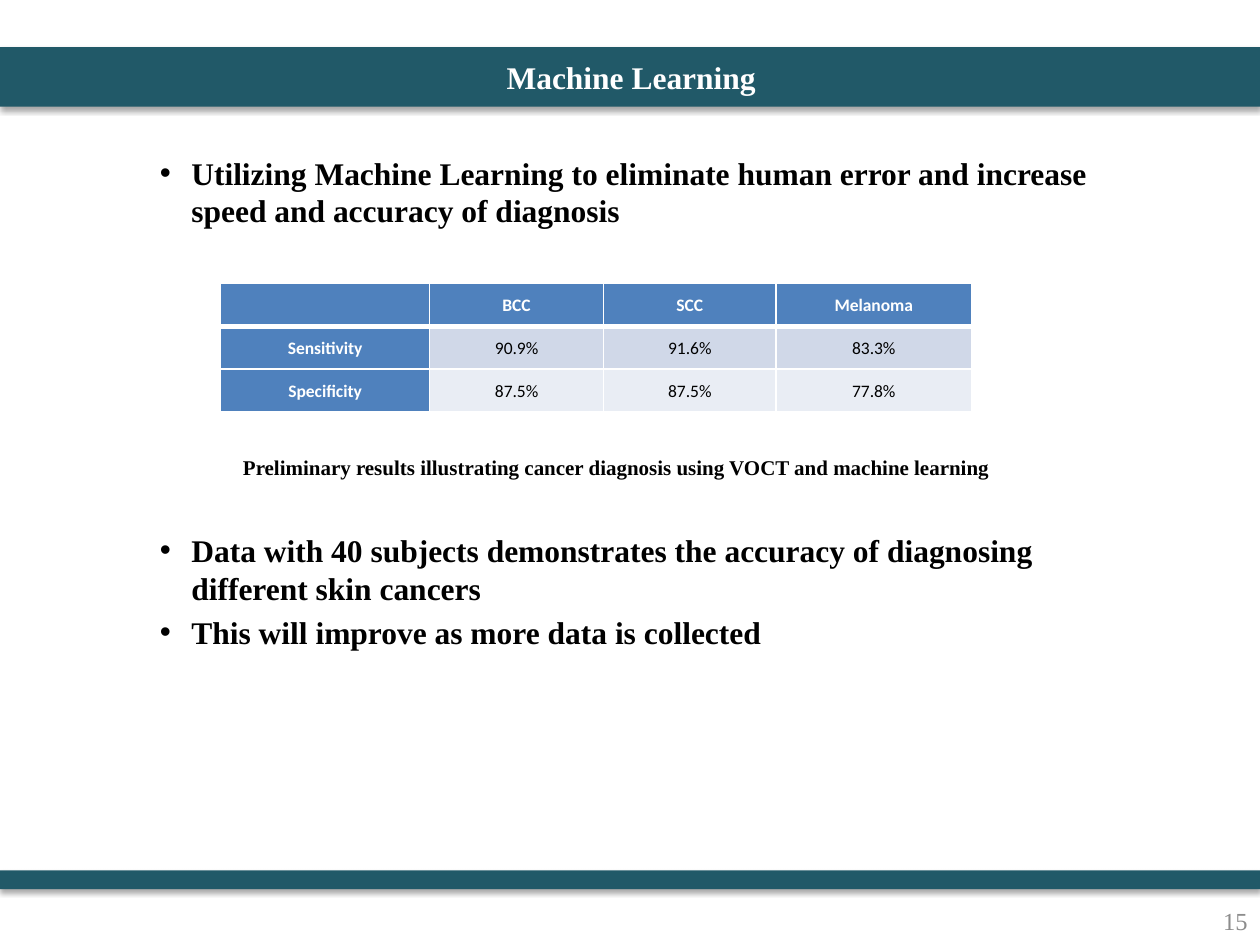
from dataclasses import dataclass

from lxml.etree import SubElement
from pptx import Presentation
from pptx.dml.color import RGBColor
from pptx.enum.shapes import MSO_SHAPE
from pptx.enum.text import MSO_ANCHOR, PP_ALIGN
from pptx.oxml import parse_xml
from pptx.oxml.ns import nsdecls, qn
from pptx.util import Emu, Inches, Pt


@dataclass(frozen=True)
class Theme:
    """Colours, fonts and type sizes of the slide."""
    bar: str = "215968"
    header: str = "4F81BD"
    bands: tuple = ("D0D8E8", "E9EDF4")
    white: str = "FFFFFF"
    black: str = "000000"
    grey: str = "8C8C8C"
    serif: str = "Times New Roman"
    sans: str = "Calibri"
    body_size: int = 18
    caption_size: int = 12
    number_size: int = 14
    table_size: int = 10


THEME = Theme()
WIDTH, HEIGHT = Inches(10), Inches(7.5)
RESULTS = (
    ("", "BCC", "SCC", "Melanoma"),
    ("Sensitivity", "90.9%", "91.6%", "83.3%"),
    ("Specificity", "87.5%", "87.5%", "77.8%"),
)
COLUMN_WIDTHS = (1.66, 1.38, 1.37, 1.55)


def share_box(left, top, width, height):
    """Turn shares of the slide's size into a box of lengths."""
    return (Emu(int(WIDTH * left)), Emu(int(HEIGHT * top)),
            Emu(int(WIDTH * width)), Emu(int(HEIGHT * height)))


def add_run(paragraph, text, size, color, bold=False, font=THEME.serif):
    """Append one styled run to a paragraph."""
    run = paragraph.add_run()
    run.text = text
    run.font.size = Pt(size)
    run.font.name = font
    run.font.bold = bold
    run.font.color.rgb = RGBColor.from_string(color)


def add_bar(slide, box):
    """Draw a full-width bar with a soft shadow below it."""
    bar = slide.shapes.add_shape(MSO_SHAPE.RECTANGLE, *box)
    bar.fill.solid()
    bar.fill.fore_color.rgb = RGBColor.from_string(THEME.bar)
    bar.line.fill.background()
    bar.shadow.inherit = False
    effects = bar._element.spPr.find(qn("a:effectLst"))
    effects.append(parse_xml(
        f'<a:outerShdw {nsdecls("a")} blurRad="{Pt(3.1)}" dist="{Pt(1.8)}" '
        f'dir="5400000" rotWithShape="0"><a:srgbClr val="{THEME.black}">'
        '<a:alpha val="35000"/></a:srgbClr></a:outerShdw>'))


def add_text_frame(slide, box, anchor=MSO_ANCHOR.TOP):
    """Add a wrapping text box and return its frame."""
    frame = slide.shapes.add_textbox(*box).text_frame
    frame.word_wrap = True
    frame.vertical_anchor = anchor
    return frame


def add_label(slide, box, text, size, color, alignment, bold=False):
    """Add one vertically centred line of text."""
    paragraph = add_text_frame(slide, box, MSO_ANCHOR.MIDDLE).paragraphs[0]
    paragraph.alignment = alignment
    add_run(paragraph, text, size, color, bold)


def indent(paragraph, margin, first_line=0, bullet=None):
    """Set the paragraph's indents and optional bullet."""
    properties = paragraph._p.get_or_add_pPr()
    properties.set("marL", str(Inches(margin)))
    properties.set("indent", str(Inches(first_line)))
    if bullet:
        SubElement(properties, qn("a:buFont"), typeface="Arial")
        SubElement(properties, qn("a:buChar"), char=bullet)


def add_body(slide, box):
    """Write the bullets and the caption of the table."""
    items = (
        ("Utilizing Machine Learning to eliminate human error and increase "
         "speed and accuracy of diagnosis", 0, True),
        ("Preliminary results illustrating cancer diagnosis using VOCT "
         "and machine learning", 129, False),
        ("Data with 40 subjects demonstrates the accuracy of diagnosing "
         "different skin cancers", 29, True),
        ("This will improve as more data is collected", 3.6, True),
    )
    frame = add_text_frame(slide, box)
    for index, (text, gap, bulleted) in enumerate(items):
        paragraph = frame.add_paragraph() if index else frame.paragraphs[0]
        paragraph.space_before = Pt(gap)
        if bulleted:
            indent(paragraph, 0.25, -0.25, "•")
        else:
            indent(paragraph, 0.66)
        size = THEME.body_size if bulleted else THEME.caption_size
        add_run(paragraph, text, size, THEME.black, True)


def set_borders(cell, bottom, top):
    """Give a cell white borders of the given bottom and top widths."""
    properties = cell._tc.get_or_add_tcPr()
    widths = {"lnL": 1, "lnR": 1, "lnT": top, "lnB": bottom}
    for index, (side, width) in enumerate(widths.items()):
        properties.insert(index, parse_xml(
            f'<a:{side} {nsdecls("a")} w="{Pt(width)}"><a:solidFill>'
            f'<a:srgbClr val="{THEME.white}"/></a:solidFill></a:{side}>'))


def add_results(slide, box):
    """Build the table of sensitivity and specificity."""
    table = slide.shapes.add_table(len(RESULTS), len(COLUMN_WIDTHS), *box).table
    table.first_col = True
    for column, width in zip(table.columns, COLUMN_WIDTHS):
        column.width = Emu(int(box[2] * width / sum(COLUMN_WIDTHS)))
    for row_index, values in enumerate(RESULTS):
        for column_index, value in enumerate(values):
            cell = table.cell(row_index, column_index)
            heading = row_index == 0 or column_index == 0
            fill = THEME.header if heading else THEME.bands[row_index - 1]
            cell.fill.solid()
            cell.fill.fore_color.rgb = RGBColor.from_string(fill)
            set_borders(cell, bottom=1 if row_index else 3,
                        top=3 if row_index == 1 else 1)
            cell.margin_left = cell.margin_right = 0
            cell.margin_top = cell.margin_bottom = 0
            cell.vertical_anchor = MSO_ANCHOR.MIDDLE
            paragraph = cell.text_frame.paragraphs[0]
            paragraph.alignment = PP_ALIGN.CENTER
            paragraph.line_spacing = Pt(13)
            if value:
                color = THEME.white if heading else THEME.black
                add_run(paragraph, value, THEME.table_size, color, heading,
                        THEME.sans)


def main():
    """Build the slide and save it."""
    presentation = Presentation()
    presentation.slide_width, presentation.slide_height = WIDTH, HEIGHT
    slide = presentation.slides.add_slide(presentation.slide_layouts[6])
    add_bar(slide, share_box(0, 0.05, 1, 0.063))
    add_bar(slide, share_box(0, 0.921, 1, 0.02))
    add_label(slide, share_box(0.775, 0.948, 0.225, 0.053), "15",
              THEME.number_size, THEME.grey, PP_ALIGN.RIGHT)
    add_body(slide, share_box(0.117, 0.156, 0.808, 0.744))
    add_label(slide, share_box(0.027, 0.05, 0.948, 0.063), "Machine Learning",
              THEME.body_size, THEME.white, PP_ALIGN.CENTER, True)
    add_results(slide, share_box(0.175, 0.3, 0.596, 0.136))
    presentation.save("out.pptx")


if __name__ == "__main__":
    main()
